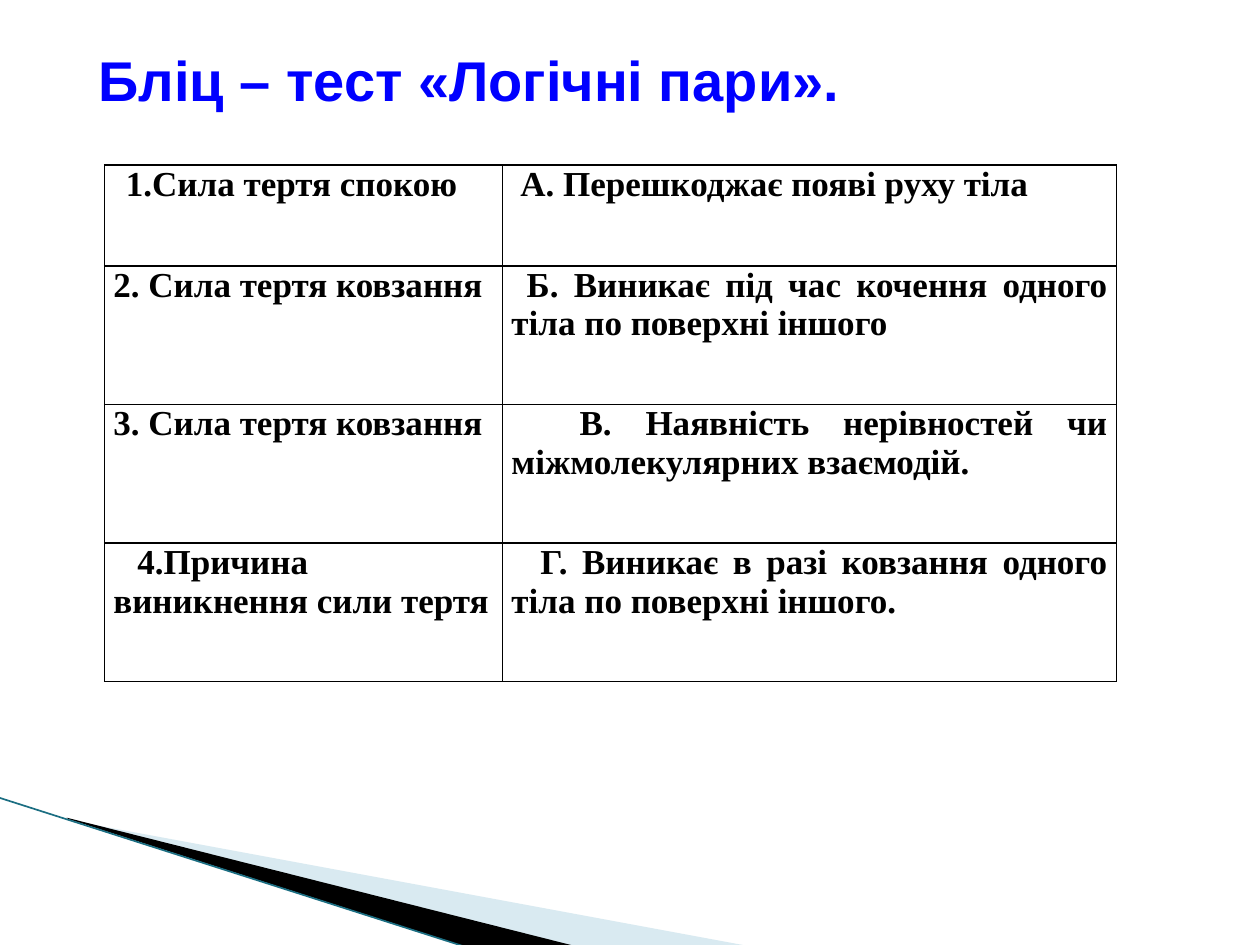
"""Builds the quiz slide of logical pairs about friction."""
from dataclasses import dataclass

from lxml.etree import SubElement
from pptx import Presentation
from pptx.dml.color import RGBColor
from pptx.enum.shapes import MSO_CONNECTOR as Connector
from pptx.enum.text import MSO_ANCHOR as Anchor, PP_ALIGN as Align
from pptx.oxml.ns import qn
from pptx.util import Emu, Pt

PX = 9144
COLORS = {"title": "0000FF", "ink": "000000", "pale": "A0CBDC", "edge": "1B6E82"}


@dataclass(frozen=True)
class Wedge:
    points: tuple
    color: str
    opacity: int = 100


@dataclass(frozen=True)
class Entry:
    text: str
    indent: int = 0
    number: int = 0


WEDGES = (
    Wedge(((55, 651), (595, 751), (456, 751), (55, 650)), "pale", 40),
    Wedge(((53, 649), (457, 751), (372, 752), (54, 650)), "ink"),
)
EDGE = (-1, 633, 371, 752)
COLUMNS = (316, 487)
ROWS = (80, 110, 110, 110)
PAIRS = (
    (Entry("Сила тертя спокою", 10, 1),
     Entry("А. Перешкоджає появі руху тіла", 7)),
    (Entry("2. Сила тертя ковзання"),
     Entry("Б. Виникає під час кочення одного тіла по поверхні іншого", 12)),
    (Entry("3. Сила тертя ковзання"),
     Entry("В. Наявність нерівностей чи міжмолекулярних взаємодій.", 54)),
    (Entry("Причина виникнення сили тертя", 19, 4),
     Entry("Г. Виникає в разі ковзання одного тіла по поверхні іншого.", 23)),
)


def px(value: int) -> Emu:
    return Emu(value * PX)


def rgb(name: str) -> RGBColor:
    return RGBColor.from_string(COLORS[name])


def write(paragraph, entry: Entry, font_name: str, size: int, color: str, align) -> None:
    paragraph.alignment = align
    properties = paragraph._p.get_or_add_pPr()
    properties.set("marL", "0")
    properties.set("indent", str(px(entry.indent)))
    if entry.number:
        SubElement(properties, qn("a:buAutoNum"), type="arabicPeriod", startAt=str(entry.number))
    else:
        SubElement(properties, qn("a:buNone"))
    run = paragraph.add_run()
    run.text = entry.text
    font = run.font
    font.name, font.size, font.bold = font_name, Pt(size), True
    font.color.rgb = rgb(color)


def draw_wedge(slide, wedge: Wedge) -> None:
    start, *others = wedge.points
    builder = slide.shapes.build_freeform(*start, scale=PX)
    builder.add_line_segments(others, close=True)
    shape = builder.convert_to_shape()
    shape.shadow.inherit = False
    shape.line.fill.background()
    shape.fill.solid()
    shape.fill.fore_color.rgb = rgb(wedge.color)
    if wedge.opacity < 100:
        color = shape._element.spPr.find(qn("a:solidFill"))[0]
        SubElement(color, qn("a:alpha"), val=str(wedge.opacity * 1000))


def draw_edge(slide) -> None:
    line = slide.shapes.add_connector(Connector.STRAIGHT, *map(px, EDGE))
    line.line.color.rgb = rgb("edge")
    line.line.width = Pt(0.95)
    SubElement(line._element.spPr, qn("a:effectLst"))


def draw_title(slide) -> None:
    title = slide.shapes.title
    title.left, title.top, title.width, title.height = map(px, (59, 30, 623, 65))
    frame = title.text_frame
    frame.word_wrap = False
    frame.vertical_anchor = Anchor.MIDDLE
    write(frame.paragraphs[0], Entry("Бліц – тест «Логічні пари».", 9),
          "Arial", 32, "title", Align.LEFT)


def draw_borders(cell) -> None:
    properties = cell._tc.get_or_add_tcPr()
    for side in ("lnL", "lnR", "lnT", "lnB"):
        border = SubElement(properties, qn(f"a:{side}"), w=str(Pt(1)))
        fill = SubElement(border, qn("a:solidFill"))
        SubElement(fill, qn("a:srgbClr"), val=COLORS["ink"])


def draw_table(slide) -> None:
    frame = slide.shapes.add_table(len(ROWS), len(COLUMNS), px(83), px(131),
                                   px(sum(COLUMNS)), px(sum(ROWS)))
    table = frame.table
    table.first_row = table.horz_banding = False
    for column, width in zip(table.columns, COLUMNS):
        column.width = px(width)
    for row, height, pair in zip(table.rows, ROWS, PAIRS):
        row.height = px(height)
        for cell, entry in zip(row.cells, pair):
            cell.margin_left = cell.margin_right = px(7)
            cell.margin_top = cell.margin_bottom = 0
            draw_borders(cell)
            cell.fill.background()
            write(cell.text_frame.paragraphs[0], entry,
                  "Times New Roman", 20, "ink", Align.JUSTIFY)


def main() -> None:
    presentation = Presentation()
    presentation.slide_width, presentation.slide_height = px(1000), px(750)
    slide = presentation.slides.add_slide(presentation.slide_layouts[5])
    for wedge in WEDGES:
        draw_wedge(slide, wedge)
    draw_edge(slide)
    draw_table(slide)
    draw_title(slide)
    presentation.save("out.pptx")


if __name__ == "__main__":
    main()
